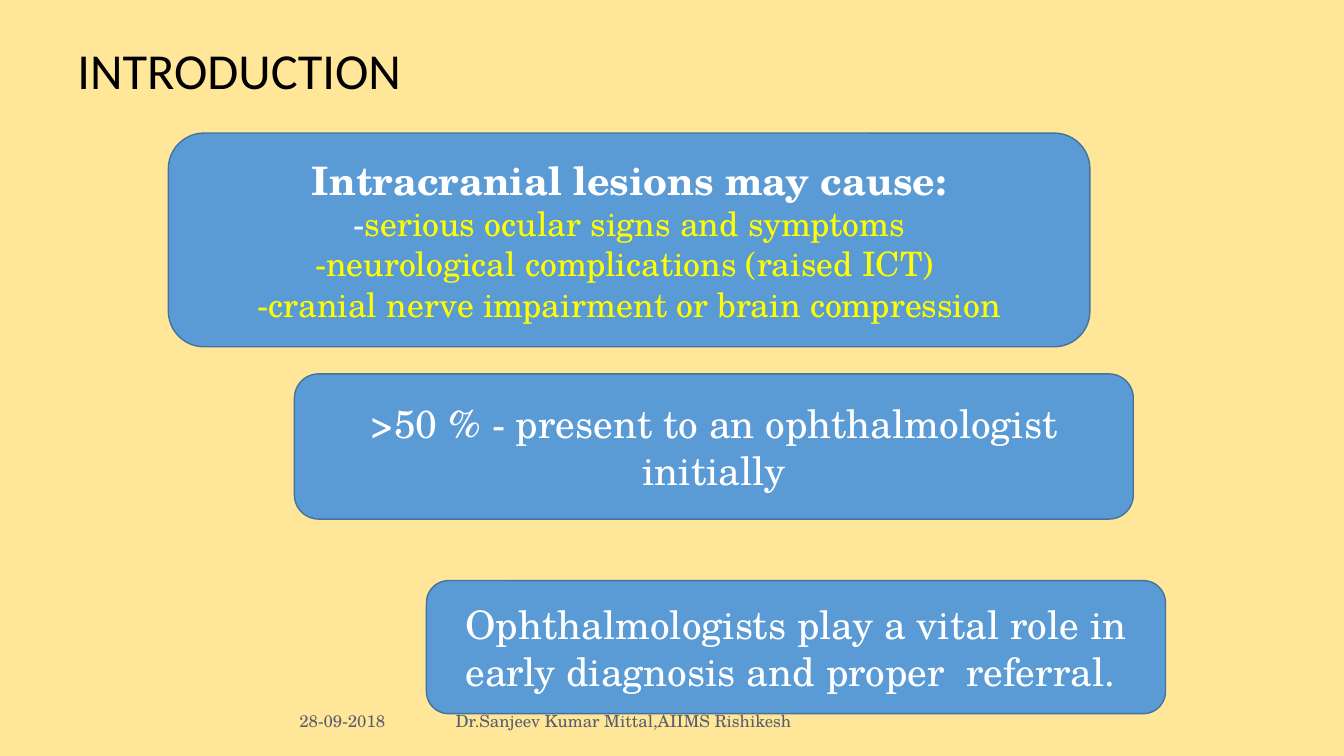
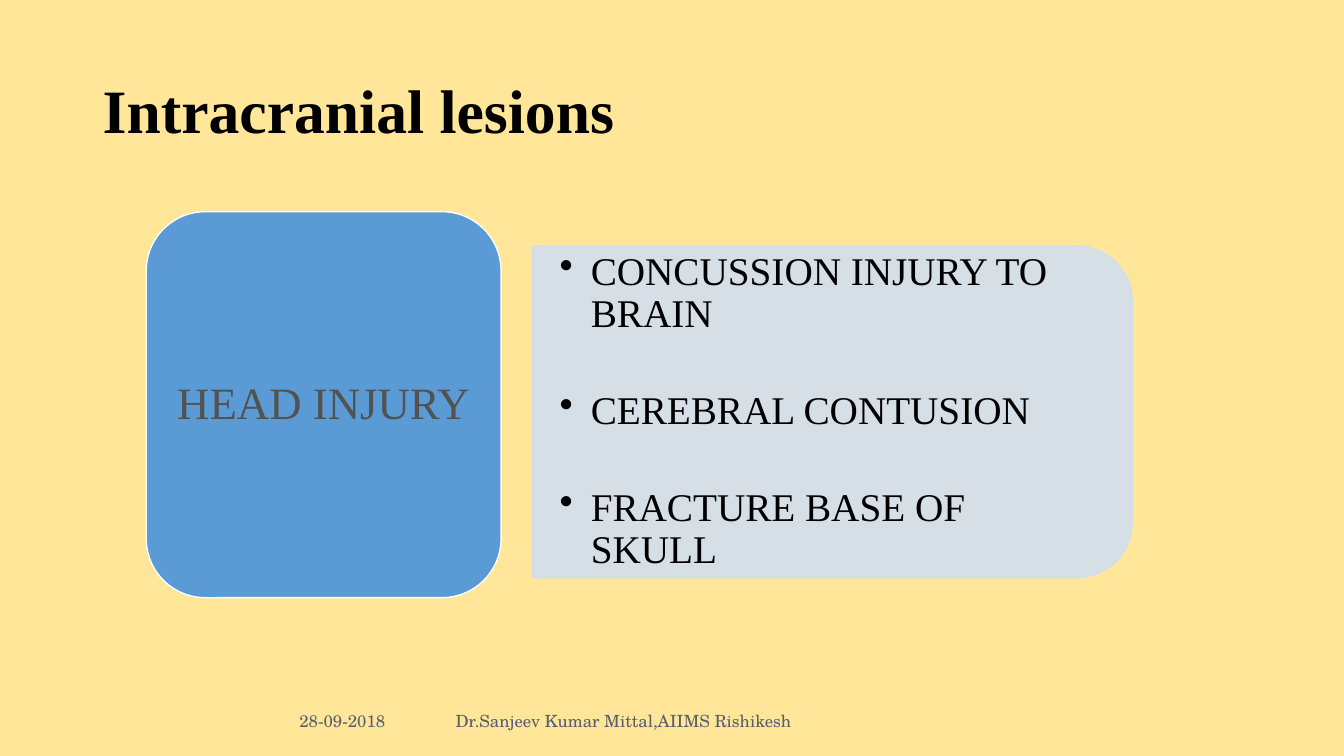
from lxml import etree
from pptx import Presentation
from pptx.dml.color import RGBColor
from pptx.enum.shapes import MSO_SHAPE
from pptx.enum.text import MSO_ANCHOR, PP_ALIGN
from pptx.oxml.ns import qn
from pptx.util import Inches, Pt

ROUNDED = MSO_SHAPE.ROUNDED_RECTANGLE
TWO_ROUNDED = MSO_SHAPE.ROUND_2_SAME_RECTANGLE
MIDDLE = MSO_ANCHOR.MIDDLE
LEFT, CENTER, RIGHT = PP_ALIGN.LEFT, PP_ALIGN.CENTER, PP_ALIGN.RIGHT

COLORS = {
    "background": "FFE699",
    "black": "000000",
    "white": "FFFFFF",
    "yellow": "FFFF00",
    "footer": "575F6D",
    "box": "5B9BD5",
    "box_line": "43739E",
    "panel": "D2DEEF",
    "label": "525252",
}
SCHOOL, TIMES, CALIBRI = "TeX Gyre Schola", "Times New Roman", "Calibri"
FOOTER = [
    ((0.92, 6.95, 3, 0.4), "28-09-2018", RIGHT),
    ((4.42, 6.95, 4.5, 0.4), "Dr.Sanjeev Kumar Mittal,AIIMS Rishikesh", LEFT),
]


def rgb(name):
    return RGBColor.from_string(COLORS[name])


def set_all(target, values):
    for key, value in values.items():
        setattr(target, key, value)


def font_format(name, size, color, bold=False):
    return {"name": name, "size": Pt(size), "bold": bold, "color": color}


def add_run(paragraph, words, style):
    run = paragraph.add_run()
    run.text = words
    set_all(run.font, {key: style[key] for key in ("name", "size", "bold")})
    run.font.color.rgb = rgb(style["color"])


def write(frame, lines, inset=(0.1, 0.05), **layout):
    across, down = map(Inches, inset)
    set_all(frame, {
        "word_wrap": True, "vertical_anchor": MIDDLE,
        "margin_left": across, "margin_right": across,
        "margin_top": down, "margin_bottom": down,
    })
    for index, runs in enumerate(lines):
        paragraph = frame.add_paragraph() if index else frame.paragraphs[0]
        set_all(paragraph, layout)
        for words, style in runs:
            add_run(paragraph, words, style)
    return frame.paragraphs


def add_text(slide, place, lines, **layout):
    frame = slide.shapes.add_textbox(*map(Inches, place)).text_frame
    return write(frame, lines, **layout)


def add_title(slide, place, words, style):
    add_text(slide, place, [[(words, style)]], line_spacing=0.9)


def add_footer(slide):
    style = font_format(SCHOOL, 12, "footer")
    for place, words, alignment in FOOTER:
        add_text(slide, place, [[(words, style)]], alignment=alignment)


def add_filled(slide, kind, place, fill, line):
    shape = slide.shapes.add_shape(kind, *map(Inches, place))
    shape.shadow.inherit = False
    shape.fill.solid()
    shape.fill.fore_color.rgb = rgb(fill)
    shape.line.color.rgb = rgb(line)
    shape.line.width = Pt(1)
    return shape


def add_box(slide, place, lines, line="box_line", **layout):
    box = add_filled(slide, ROUNDED, place, "box", line)
    write(box.text_frame, lines, alignment=CENTER, **layout)


def add_panel(slide, place, opacity):
    left, top, width, height = place
    shift = (width - height) / 2
    upright = (left + shift, top - shift, height, width)
    panel = add_filled(slide, TWO_ROUNDED, upright, "panel", "panel")
    panel.rotation = 90
    for color in panel.element.spPr.iter(qn("a:srgbClr")):
        etree.SubElement(color, qn("a:alpha"), val=str(opacity * 1000))


def add_bullets(slide, place, items, style, gap):
    paragraphs = add_text(slide, place, [[(item, style)] for item in items],
                          inset=(0.27, 0.14), line_spacing=0.9)
    indent = Inches(0.31)
    for index, paragraph in enumerate(paragraphs):
        if index:
            paragraph.space_before = Pt(gap)
        properties = paragraph._p.get_or_add_pPr()
        properties.set("marL", str(indent))
        properties.set("indent", str(-indent))
        etree.SubElement(properties, qn("a:buChar"), char="•")


def build_introduction(slide):
    add_title(slide, (0.67, 0.3, 10.89, 0.85), "INTRODUCTION",
              font_format(CALIBRI, 36, "black"))
    add_footer(slide)
    heading = font_format(SCHOOL, 28, "white", True)
    statement = font_format(SCHOOL, 28, "white")
    dash = font_format(SCHOOL, 24, "white")
    effect = font_format(SCHOOL, 24, "yellow")
    add_box(slide, (1.67, 1.32, 9.14, 2.12), [
        [("Intracranial lesions may cause:", heading)],
        [("-", dash), ("serious ocular signs and symptoms", effect)],
        [("-neurological complications (raised ICT) ", effect)],
        [("-cranial nerve impairment or brain compression", effect)],
    ])
    add_box(slide, (2.92, 3.71, 8.32, 1.44),
            [[(">50 % - present to an ophthalmologist initially", statement)]])
    add_box(slide, (4.23, 5.76, 7.33, 1.32),
            [[("Ophthalmologists play a vital role in early diagnosis "
               "and proper  referral. ", statement)]])


def build_lesions(slide):
    add_title(slide, (0.92, 0.4, 11.5, 1.45), "Intracranial lesions",
              font_format(TIMES, 44, "black", True))
    add_panel(slide, (5.28, 2.44, 5.95, 3.29), 90)
    add_bullets(slide, (5.28, 2.6, 5.79, 2.97),
                ["CONCUSSION INJURY TO BRAIN", "CEREBRAL CONTUSION",
                 "FRACTURE BASE OF SKULL"],
                font_format(TIMES, 28, "black"), 39)
    add_box(slide, (1.45, 2.1, 3.52, 3.83),
            [[("HEAD INJURY", font_format(TIMES, 32, "label"))]],
            line="white", inset=(0.13, 0.07), line_spacing=0.9)
    add_footer(slide)


def main():
    deck = Presentation()
    set_all(deck, {"slide_width": Inches(13.33), "slide_height": Inches(7.5)})
    backdrop = deck.slide_master.background.fill
    backdrop.solid()
    backdrop.fore_color.rgb = rgb("background")
    for build in (build_introduction, build_lesions):
        build(deck.slides.add_slide(deck.slide_layouts[6]))
    deck.save("out.pptx")


if __name__ == "__main__":
    main()
